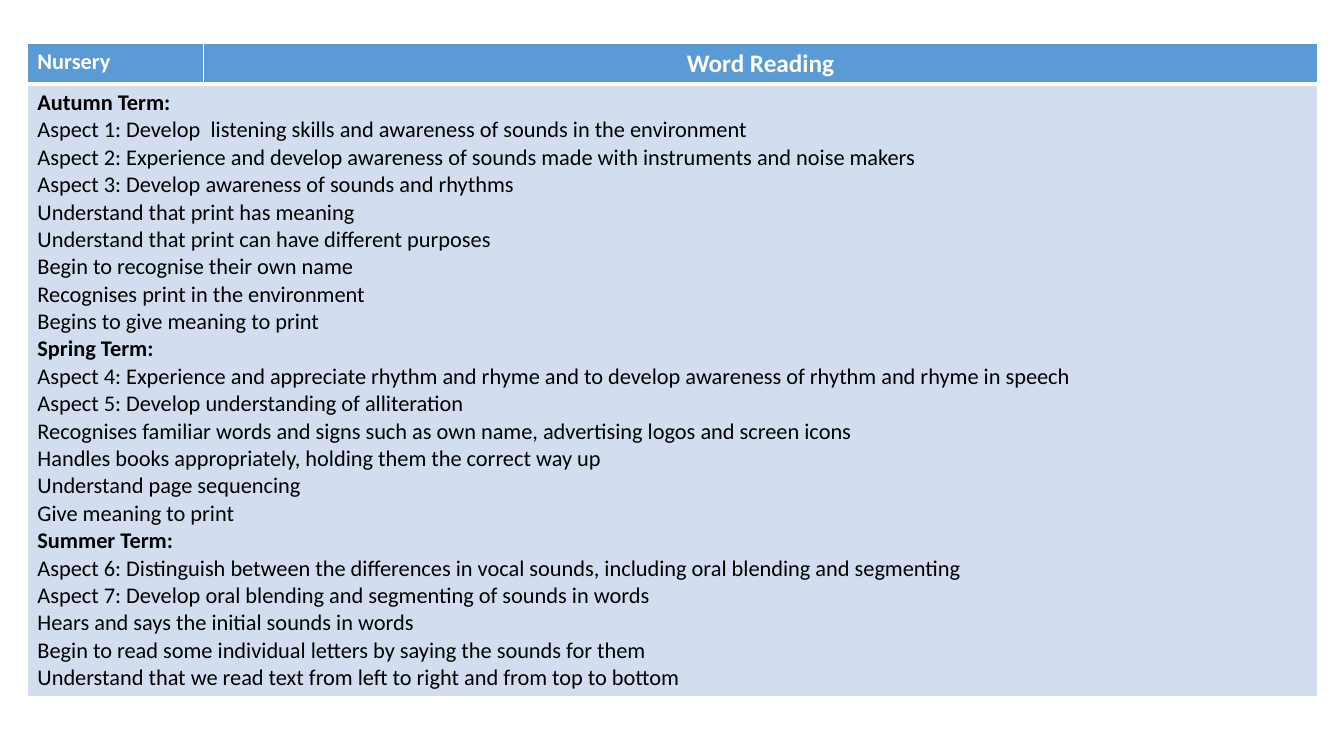
from dataclasses import dataclass

from lxml.etree import fromstring
from pptx import Presentation
from pptx.dml.color import RGBColor
from pptx.enum.text import PP_ALIGN
from pptx.oxml.ns import nsdecls
from pptx.util import Cm, Pt

HEADS = ["Nursery", "Word Reading"]
TERMS = {
    "Autumn Term:": [
        "Aspect 1: Develop  listening skills and awareness of sounds in the environment",
        "Aspect 2: Experience and develop awareness of sounds made with instruments and noise makers",
        "Aspect 3: Develop awareness of sounds and rhythms",
        "Understand that print has meaning",
        "Understand that print can have different purposes",
        "Begin to recognise their own name",
        "Recognises print in the environment",
        "Begins to give meaning to print",
    ],
    "Spring Term:": [
        "Aspect 4: Experience and appreciate rhythm and rhyme and to develop awareness of rhythm and rhyme in speech",
        "Aspect 5: Develop understanding of alliteration",
        "Recognises familiar words and signs such as own name, advertising logos and screen icons",
        "Handles books appropriately, holding them the correct way up",
        "Understand page sequencing",
        "Give meaning to print",
    ],
    "Summer Term:": [
        "Aspect 6: Distinguish between the differences in vocal sounds, including oral blending and segmenting",
        "Aspect 7: Develop oral blending and segmenting of sounds in words",
        "Hears and says the initial sounds in words",
        "Begin to read some individual letters by saying the sounds for them",
        "Understand that we read text from left to right and from top to bottom",
    ],
}
LEFT, TOP = 0.69, 1.09
COLS = [4.44, 28.07]
ROWS = [0.97, 15.42]


@dataclass(frozen=True)
class Theme:
    """Hold the colours, type sizes and rule widths."""
    font: str = "Calibri"
    head: str = "5B9BD5"
    body: str = "D2DEEF"
    light: str = "FFFFFF"
    dark: str = "000000"
    text: int = 16
    title: int = 18
    thin: int = 1
    thick: int = 3


THEME = Theme()


def style(para, size, color, bold):
    """Format every run of a paragraph."""
    for run in para.runs:
        font = run.font
        font.name, font.size, font.bold = THEME.font, Pt(size), bold
        font.color.rgb = RGBColor.from_string(color)


def paint(cell, fill, **edges):
    """Fill a cell and rule its four edges."""
    cell.fill.solid()
    cell.fill.fore_color.rgb = RGBColor.from_string(fill)
    props = cell._tc.get_or_add_tcPr()
    for spot, side in enumerate("LRTB"):
        width = Pt(edges.get(side, THEME.thin))
        props.insert(spot, fromstring(
            f'<a:ln{side} {nsdecls("a")} w="{width}"><a:solidFill>'
            f'<a:srgbClr val="{THEME.light}"/></a:solidFill></a:ln{side}>'))


def main():
    """Build the reading plan slide."""
    deck = Presentation()
    deck.slide_width, deck.slide_height = Cm(33.87), Cm(19.05)
    slide = deck.slides.add_slide(deck.slide_layouts[6])
    table = slide.shapes.add_table(
        len(ROWS), len(COLS), Cm(LEFT), Cm(TOP), Cm(sum(COLS)), Cm(sum(ROWS))).table
    for col, width in zip(table.columns, COLS):
        col.width = Cm(width)
    for row, height in zip(table.rows, ROWS):
        row.height = Cm(height)

    for col, (label, size) in enumerate(zip(HEADS, (THEME.text, THEME.title))):
        cell = table.cell(0, col)
        cell.text_frame.text = label
        style(cell.text_frame.paragraphs[0], size, THEME.light, True)
        paint(cell, THEME.head, B=THEME.thick)
        paint(table.cell(1, col), THEME.body, T=THEME.thick)
    table.cell(0, 1).text_frame.paragraphs[0].alignment = PP_ALIGN.CENTER

    plan = table.cell(1, 0)
    plan.merge(table.cell(1, 1))
    lines = [line for term, aims in TERMS.items() for line in (term, *aims)]
    plan.text_frame.text = "\n".join(lines)
    for para in plan.text_frame.paragraphs:
        style(para, THEME.text, THEME.dark, para.text in TERMS)
    deck.save("out.pptx")


if __name__ == "__main__":
    main()
